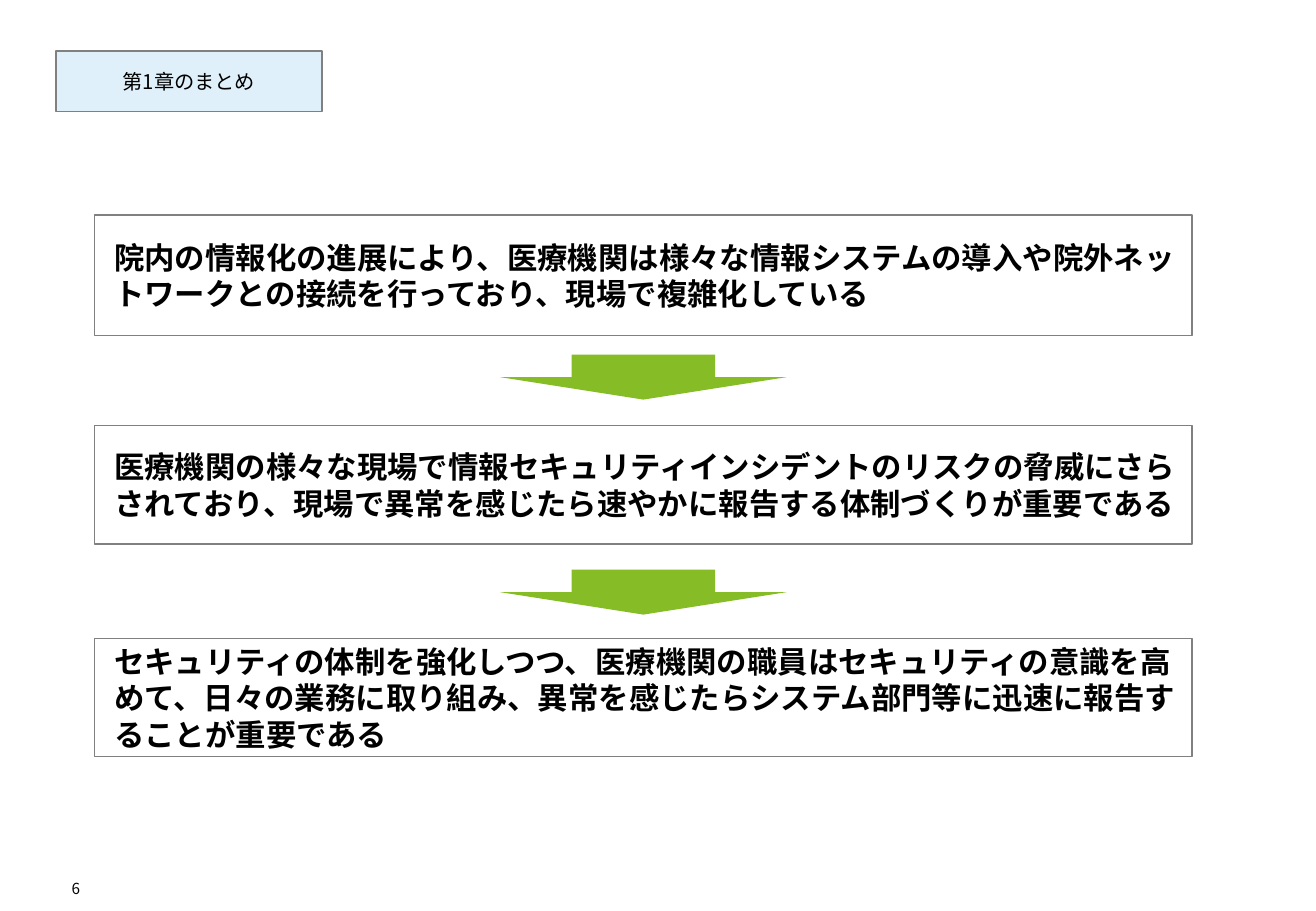
from lxml import etree
from pptx import Presentation
from pptx.dml.color import RGBColor
from pptx.enum import shapes, text
from pptx.oxml.ns import qn
from pptx.util import Inches, Pt

FONT = "Noto Sans CJK JP"
BLACK = RGBColor(0x00, 0x00, 0x00)
GRAY = RGBColor(0x80, 0x80, 0x80)
PALE_BLUE = RGBColor(0xE0, 0xF0, 0xFA)
GREEN = RGBColor(0x86, 0xBC, 0x25)

# Top, height and wording of each summary box
SUMMARIES = [
    (1.77, 0.99, "院内の情報化の進展により、医療機関は様々な情報システムの導入や院外ネットワークとの接続を行っており、現場で複雑化している"),
    (3.5, 0.98, "医療機関の様々な現場で情報セキュリティインシデントのリスクの脅威にさらされており、現場で異常を感じたら速やかに報告する体制づくりが重要である"),
    (5.26, 0.97, "セキュリティの体制を強化しつつ、医療機関の職員はセキュリティの意識を高めて、日々の業務に取り組み、異常を感じたらシステム部門等に迅速に報告することが重要である"),
]
ARROW_TOPS = [2.92, 4.69]


def write(tf, words, size, align, anchor, bold=False):
    tf.vertical_anchor = anchor
    p = tf.paragraphs[0]
    p.text = words
    p.alignment = align
    p.font.name = FONT
    p.font.size = Pt(size)
    p.font.bold = bold
    p.font.color.rgb = BLACK
    props = p._p.pPr.find(qn("a:defRPr"))
    etree.SubElement(props, qn("a:ea")).set("typeface", FONT)


def clear_margins(tf, left=0):
    tf.margin_left = Inches(left)
    tf.margin_right = tf.margin_top = tf.margin_bottom = 0


def add_block(slide, kind, box, fill=None, outlined=True):
    """Add a flat shape, unfilled unless a fill colour is given."""
    sp = slide.shapes.add_shape(kind, *map(Inches, box))
    sp.shadow.inherit = False
    if fill is None:
        sp.fill.background()
    else:
        sp.fill.solid()
        sp.fill.fore_color.rgb = fill
    if outlined:
        sp.line.color.rgb = GRAY
        sp.line.width = Pt(0.75)
    else:
        sp.line.fill.background()
    return sp


def add_chapter_label(slide, box):
    sp = add_block(slide, shapes.MSO_SHAPE.RECTANGLE, box, PALE_BLUE)
    write(sp.text_frame, "第1章のまとめ", 12,
          text.PP_ALIGN.CENTER, text.MSO_ANCHOR.MIDDLE)


def add_summary_flow(slide, left, width):
    """Stack the summary boxes with a centred arrow between neighbours."""
    for top, height, words in SUMMARIES:
        sp = add_block(slide, shapes.MSO_SHAPE.RECTANGLE,
                       (left, top, width, height))
        clear_margins(sp.text_frame, left=0.16)
        write(sp.text_frame, words, 18,
              text.PP_ALIGN.LEFT, text.MSO_ANCHOR.MIDDLE, bold=True)
    arrow_width = 2.36
    arrow_left = left + (width - arrow_width) / 2
    for top in ARROW_TOPS:
        add_block(slide, shapes.MSO_SHAPE.DOWN_ARROW,
                  (arrow_left, top, arrow_width, 0.37), GREEN, outlined=False)


def add_page_number(slide, box):
    tf = slide.shapes.add_textbox(*map(Inches, box)).text_frame
    tf.word_wrap = False
    clear_margins(tf)
    write(tf, "6", 9, text.PP_ALIGN.RIGHT, text.MSO_ANCHOR.BOTTOM)


def main():
    prs = Presentation()
    prs.slide_width = Inches(10.83)
    prs.slide_height = Inches(7.5)
    slide = prs.slides.add_slide(prs.slide_layouts[6])
    add_page_number(slide, (0.46, 7.2, 0.2, 0.19))
    add_chapter_label(slide, (0.46, 0.42, 2.19, 0.5))
    add_summary_flow(slide, left=0.78, width=9.03)
    prs.save("out.pptx")


if __name__ == "__main__":
    main()
